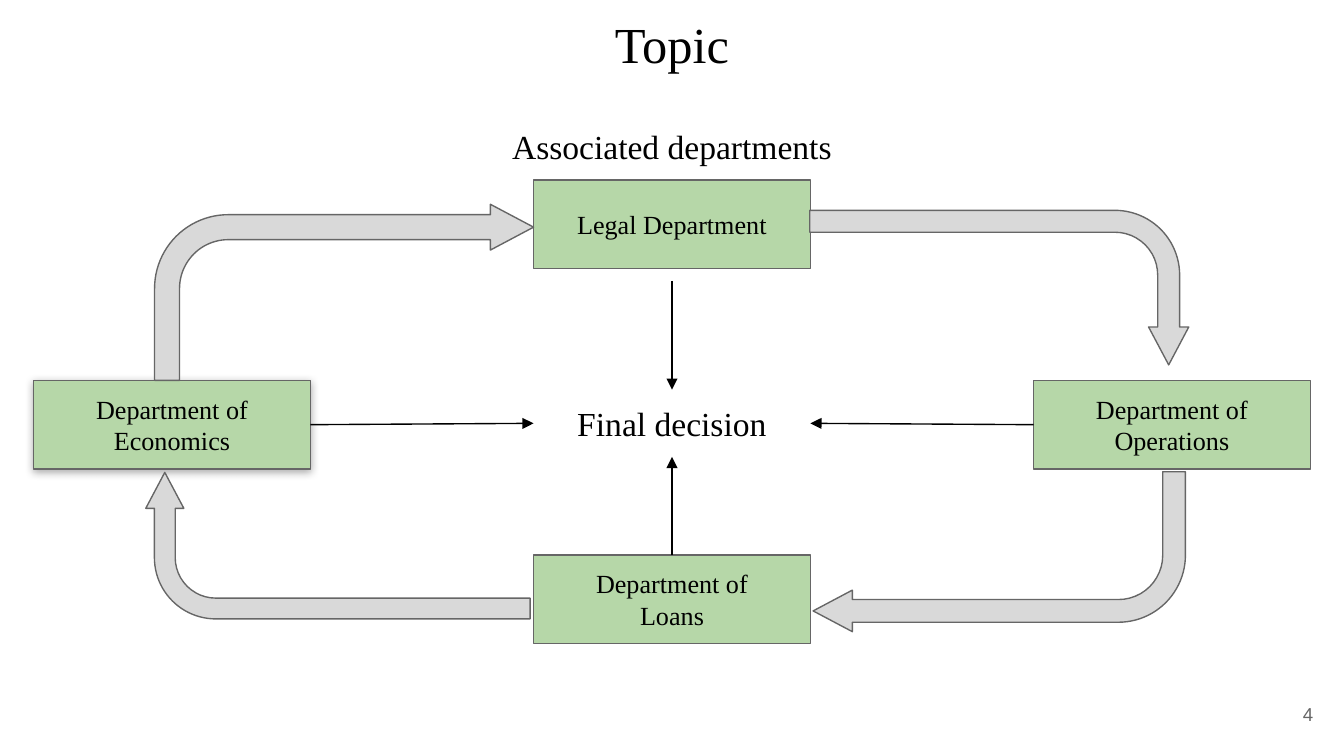
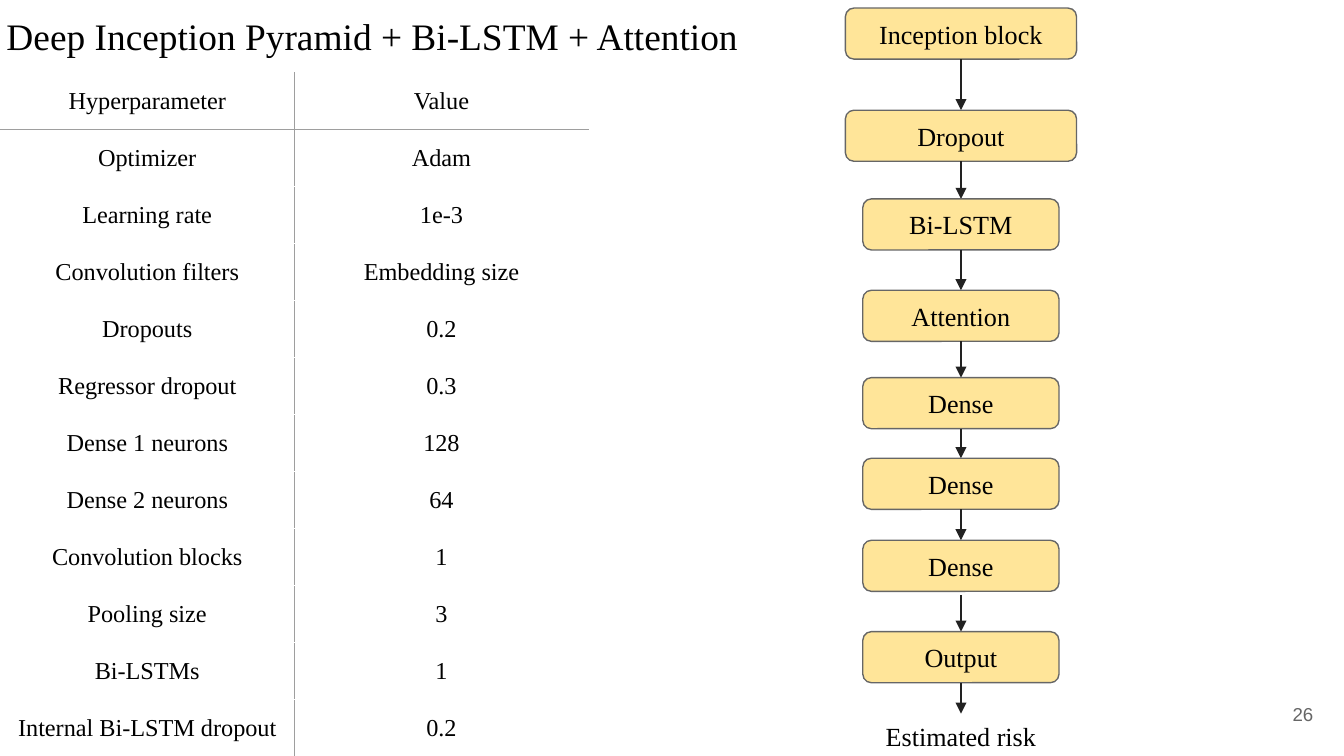
import pptx
import pptx.dml.color
import pptx.enum.shapes
import pptx.enum.text
import pptx.oxml
import pptx.oxml.ns
import pptx.util
from lxml import etree

Inches = pptx.util.Inches
Pt = pptx.util.Pt
Shapes = pptx.enum.shapes.MSO_SHAPE
Align = pptx.enum.text.PP_ALIGN
Anchor = pptx.enum.text.MSO_ANCHOR
qn = pptx.oxml.ns.qn

# Shared style
SLIDE_WIDTH = 10
SLIDE_HEIGHT = SLIDE_WIDTH * 9 / 16
SERIF, SANS = "Times New Roman", "Arial"
BLACK, WHITE, GRAY, DARK = "000000", "FFFFFF", "666666", "222222"
GREEN, SILVER, YELLOW, RULE = "B6D7A8", "D9D9D9", "FFE599", "9E9E9E"
LINE_WIDTH = 0.75
INSET = 0.1

# Slide 1: departments around the decision (name, left, top, label width, label height)
BOX_WIDTH, BOX_HEIGHT = 2.06, 0.66
DEPARTMENTS = [
    ("Department of Economics", 0.25, 2.83, 1.49, 0.67),
    ("Department of Loans", 3.97, 4.13, 1.49, 0.67),
    ("Department of Operations", 7.69, 2.83, 1.49, 0.67),
    ("Legal Department", 3.97, 1.34, 1.75, 0.44),
]
RAISED_DEPARTMENT = "Department of Economics"
# Bent arrows (left, top, width, height, rotation)
CYCLE_ARROWS = [
    (1.15, 1.52, 2.82, 1.31, 0),
    (1.97, 2.63, 1.09, 2.86, 270),
    (6.86, 0.73, 1.15, 2.82, 90),
    (6.05, 3.51, 2.77, 1.19, 180),
]
BEND = (0.142, 0.13, 0.245, 0.419)
DECISION_ARROWS = [
    ((5, 2.09), (5, 2.9)),
    ((7.69, 3.16), (6.03, 3.15)),
    ((5, 4.13), (5, 3.4)),
    ((2.31, 3.16), (3.97, 3.15)),
]

# Slide 2: hyperparameters and network layers
HYPERPARAMETERS = [
    ("Hyperparameter", "Value"),
    ("Optimizer", "Adam"),
    ("Learning rate", "1e-3"),
    ("Convolution filters", "Embedding size"),
    ("Dropouts", "0.2"),
    ("Regressor dropout", "0.3"),
    ("Dense 1 neurons", "128"),
    ("Dense 2 neurons", "64"),
    ("Convolution blocks", "1"),
    ("Pooling size", "3"),
    ("Bi-LSTMs", "1"),
    ("Internal Bi-LSTM dropout", "0.2"),
]
TABLE_TOP, TABLE_HEIGHT, COLUMN_WIDTH = 0.54, 5.09, 2.19
# Layers (name, top, width, gap before the arrow below)
LAYERS = [
    ("Inception block", 0.06, 1.72, 0),
    ("Dropout", 0.82, 1.72, 0),
    ("Bi-LSTM", 1.48, 1.46, 0),
    ("Attention", 2.16, 1.46, 0),
    ("Dense", 2.81, 1.46, 0),
    ("Dense", 3.41, 1.46, 0),
    ("Dense", 4.02, 1.46, 0.03),
    ("Output", 4.7, 1.46, 0),
]
LAYER_CENTER, LAYER_HEIGHT, FLOW_END = 7.15, 0.38, 5.31


def color(value):
    return pptx.dml.color.RGBColor.from_string(value)


def write(frame, text, size, font=SERIF, ink=BLACK, align=Align.CENTER, anchor=Anchor.TOP):
    frame.word_wrap = True
    frame.vertical_anchor = anchor
    frame.margin_left = frame.margin_right = Inches(INSET)
    frame.margin_top = frame.margin_bottom = Inches(INSET)
    frame.text = text
    paragraph = frame.paragraphs[0]
    paragraph.alignment = align
    style = paragraph.runs[0].font
    style.size, style.name = Pt(size), font
    style.color.rgb = color(ink)


def add_text(slide, text, box, size, **options):
    shape = slide.shapes.add_textbox(*map(Inches, box))
    write(shape.text_frame, text, size, **options)


def add_block(slide, preset, box, fill, adjustments=()):
    shape = slide.shapes.add_shape(preset, *map(Inches, box))
    shape.shadow.inherit = False
    shape.fill.solid()
    shape.fill.fore_color.rgb = color(fill)
    shape.line.color.rgb = color(GRAY)
    shape.line.width = Pt(LINE_WIDTH)
    for index, value in enumerate(adjustments):
        shape.adjustments[index] = value
    return shape


def add_drop_shadow(shape):
    effects = shape._element.spPr.find(qn("a:effectLst"))
    shadow = etree.SubElement(effects, qn("a:outerShdw"), blurRad=str(Pt(4.5)),
                              dist=str(Pt(1.5)), dir="5400000", algn="bl", rotWithShape="0")
    tint = etree.SubElement(shadow, qn("a:srgbClr"), val=BLACK)
    etree.SubElement(tint, qn("a:alpha"), val="32000")


def add_arrow(slide, start, end, ink):
    connector = slide.shapes.add_connector(
        pptx.enum.shapes.MSO_CONNECTOR.STRAIGHT, *map(Inches, start + end))
    connector.line.color.rgb = color(ink)
    connector.line.width = Pt(LINE_WIDTH)
    etree.SubElement(connector.line._get_or_add_ln(), qn("a:tailEnd"), type="triangle")
    etree.SubElement(connector._element.spPr, qn("a:effectLst"))


def set_borders(cell, sides):
    properties = cell._tc.get_or_add_tcPr()
    for index, (side, ink) in enumerate(sides.items()):
        line = etree.Element(qn("a:ln" + side), w=str(Pt(LINE_WIDTH)))
        fill = etree.SubElement(line, qn("a:solidFill"))
        etree.SubElement(fill, qn("a:srgbClr"), val=ink)
        properties.insert(index, line)


def add_page_number(slide, number):
    add_text(slide, number, (9.27, 5.1, 0.6, 0.43), 10, font=SANS, ink=GRAY,
             align=Align.RIGHT, anchor=Anchor.MIDDLE)


def build_departments(slide):
    add_text(slide, "Topic", (0.65, 0, 8.7, 0.66), 27)
    add_text(slide, "Associated departments", (3.44, 0.84, 3.12, 0.5), 18)

    # Department boxes with centred labels
    for name, left, top, width, height in DEPARTMENTS:
        block = add_block(slide, Shapes.RECTANGLE, (left, top, BOX_WIDTH, BOX_HEIGHT), GREEN)
        if name == RAISED_DEPARTMENT:
            add_drop_shadow(block)
        label = (left + (BOX_WIDTH - width) / 2, top + (BOX_HEIGHT - height) / 2, width, height)
        add_text(slide, name, label, 14)

    # Cycle between departments
    for *box, rotation in CYCLE_ARROWS:
        add_block(slide, Shapes.BENT_ARROW, box, SILVER, BEND).rotation = rotation

    # Decision in the middle
    add_text(slide, "Final decision", (3.97, 2.9, 2.06, 0.5), 18)
    for start, end in DECISION_ARROWS:
        add_arrow(slide, start, end, BLACK)
    add_page_number(slide, "4")


def add_hyperparameter_table(slide):
    rows, columns = len(HYPERPARAMETERS), len(HYPERPARAMETERS[0])
    box = (0, TABLE_TOP, COLUMN_WIDTH * columns, TABLE_HEIGHT)
    table = slide.shapes.add_table(rows, columns, *map(Inches, box)).table
    table.first_row = table.horz_banding = False
    for row_index, values in enumerate(HYPERPARAMETERS):
        for column_index, value in enumerate(values):
            cell = table.cell(row_index, column_index)
            write(cell.text_frame, value, 13)
            cell.vertical_anchor = Anchor.MIDDLE
            cell.margin_left = cell.margin_right = Inches(INSET)
            cell.margin_top = cell.margin_bottom = Inches(INSET)
            cell.fill.background()
            # Only the inner divider and the header rule are gray
            set_borders(cell, {
                "L": RULE if column_index == 1 else WHITE,
                "R": RULE if column_index == 0 else WHITE,
                "T": RULE if row_index == 1 else WHITE,
                "B": RULE if row_index == 0 else WHITE,
            })


def build_network(slide):
    add_text(slide, "Deep Inception Pyramid + Bi-LSTM + Attention",
             (-0.05, 0, 6.47, 0.54), 20, align=Align.LEFT)
    add_hyperparameter_table(slide)

    # Layer chain, each arrow ending at the next layer
    arrow_ends = [layer[1] for layer in LAYERS[1:]] + [FLOW_END]
    for (name, top, width, gap), end in zip(LAYERS, arrow_ends):
        box = (LAYER_CENTER - width / 2, top, width, LAYER_HEIGHT)
        block = add_block(slide, Shapes.ROUNDED_RECTANGLE, box, YELLOW, (0.167,))
        write(block.text_frame, name, 14, anchor=Anchor.MIDDLE)
        add_arrow(slide, (LAYER_CENTER, top + LAYER_HEIGHT + gap), (LAYER_CENTER, end), DARK)
    add_text(slide, "Estimated risk", (6.14, 5.26, 2.02, 0.44), 14)
    add_page_number(slide, "26")


def main():
    presentation = pptx.Presentation()
    presentation.slide_width = Inches(SLIDE_WIDTH)
    presentation.slide_height = Inches(SLIDE_HEIGHT)
    for build in (build_departments, build_network):
        build(presentation.slides.add_slide(presentation.slide_layouts[6]))
    presentation.save("out.pptx")


if __name__ == "__main__":
    main()
